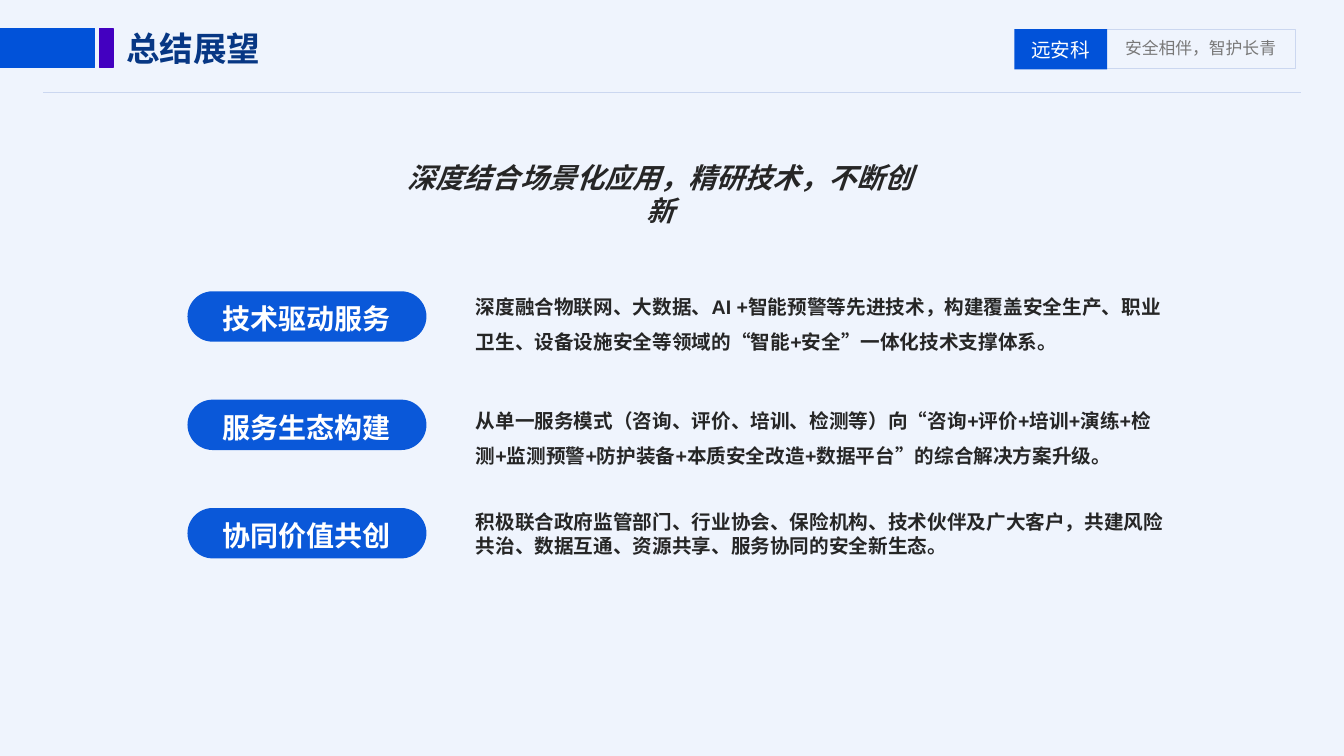
from lxml import etree
from pptx import Presentation
from pptx.dml.color import RGBColor
from pptx.enum.shapes import MSO_CONNECTOR, MSO_SHAPE
from pptx.enum.text import MSO_ANCHOR, MSO_AUTO_SIZE, PP_ALIGN
from pptx.oxml.ns import qn
from pptx.util import Inches, Pt

RECT, ROUNDED = MSO_SHAPE.RECTANGLE, MSO_SHAPE.ROUNDED_RECTANGLE
STRAIGHT = MSO_CONNECTOR.STRAIGHT
LEFT, CENTER = PP_ALIGN.LEFT, PP_ALIGN.CENTER
TOP, MIDDLE = MSO_ANCHOR.TOP, MSO_ANCHOR.MIDDLE
GROW = MSO_AUTO_SIZE.SHAPE_TO_FIT_TEXT

LATIN, CJK = "Arial", "Noto Sans CJK SC"
BLUE, PURPLE, PALE = "0152D9", "4300C0", "CBD7F0"
PILL_BLUE, DARK, WHITE = "0A58D9", "262626", "FFFFFF"
PILL_TOP, PILL_PITCH = 2.89, 1.075

# Pill label, description, description top, height and line spacing
TOPICS = [
    ("技术驱动服务",
     "深度融合物联网、大数据、AI +智能预警等先进技术，构建覆盖安全生产、"
     "职业卫生、设备设施安全等领域的“智能+安全”一体化技术支撑体系。",
     2.76, 0.81, 1.5),
    ("服务生态构建",
     "从单一服务模式（咨询、评价、培训、检测等）向“咨询+评价+培训+演练"
     "+检测+监测预警+防护装备+本质安全改造+数据平台”的综合解决方案升级。",
     3.89, 0.81, 1.5),
    ("协同价值共创",
     "积极联合政府监管部门、行业协会、保险机构、技术伙伴及广大客户，"
     "共建风险共治、数据互通、资源共享、服务协同的安全新生态。",
     5.01, 0.57, 1),
]


def rgb(color):
    return RGBColor.from_string(color)


def write(tf, text, size, color, font=LATIN, bold=False, italic=False,
          align=LEFT, spacing=None):
    p = tf.paragraphs[0]
    p.alignment = align
    p.line_spacing = spacing
    r = p.add_run()
    r.text = text
    r.font.size = Pt(size)
    r.font.name = font
    r.font.bold = bold
    r.font.italic = italic
    r.font.color.rgb = rgb(color)
    ea = etree.SubElement(r.font._element, qn("a:ea"))
    ea.set("typeface", CJK)


def add_text(slide, box, text, size, color, wrap=True, anchor=TOP,
             grow=True, **style):
    tf = slide.shapes.add_textbox(*map(Inches, box)).text_frame
    tf.word_wrap = wrap
    tf.vertical_anchor = anchor
    if grow:
        tf.auto_size = GROW
    write(tf, text, size, color, **style)
    return tf


def add_block(slide, box, fill=None, line=None, kind=RECT):
    s = slide.shapes.add_shape(kind, *map(Inches, box))
    s.shadow.inherit = False
    if fill:
        s.fill.solid()
        s.fill.fore_color.rgb = rgb(fill)
    else:
        s.fill.background()
    if line:
        s.line.color.rgb = rgb(line)
        s.line.width = Pt(1)
    else:
        s.line.fill.background()
    return s


def add_rule(slide, left, right, y):
    c = slide.shapes.add_connector(
        STRAIGHT, Inches(left), Inches(y), Inches(right), Inches(y))
    c.line.color.rgb = rgb(PALE)
    c.line.width = Pt(0.5)
    etree.SubElement(c._element.spPr, qn("a:effectLst"))


def add_header(slide):
    add_rule(slide, 0.43, 12.9, 0.92)
    add_block(slide, (0, 0.28, 0.94, 0.39), BLUE, BLUE)
    add_block(slide, (0.99, 0.28, 0.13, 0.39), PURPLE, PURPLE)
    add_text(slide, (11.06, 0.33, 1.7, 0.3), "安全相伴，智护长青", 12, "787878",
             wrap=False, font=CJK)
    add_block(slide, (10.43, 0.29, 2.42, 0.39), line=PALE)
    badge = add_block(slide, (10.06, 0.29, 0.92, 0.4), BLUE)
    badge.text_frame.vertical_anchor = MIDDLE
    write(badge.text_frame, "远安科", 14, WHITE, font=CJK, align=CENTER)
    tf = add_text(slide, (1.25, 0.3, 5.25, 0.5), "总结展望", 24, "073784",
                  grow=False, bold=True, spacing=0.97)
    tf.margin_left = tf.margin_top = tf.margin_right = tf.margin_bottom = 0


def add_pill(slide, top, label):
    pill = add_block(slide, (1.86, top, 2.37, 0.5), PILL_BLUE, kind=ROUNDED)
    pill.adjustments[0] = 0.5
    add_text(slide, (1.9, top - 0.01, 2.28, 0.48), label, 20, WHITE,
             anchor=MIDDLE, bold=True, align=CENTER, spacing=1.25)


def main():
    prs = Presentation()
    prs.slide_width, prs.slide_height = Inches(13.33), Inches(7.5)
    slide = prs.slides.add_slide(prs.slide_layouts[6])
    slide.background.fill.solid()
    slide.background.fill.fore_color.rgb = rgb("EFF4FD")

    add_header(slide)
    add_text(slide, (3.93, 1.54, 5.24, 0.44),
             "深度结合场景化应用，精研技术，不断创新", 20, DARK,
             bold=True, italic=True, align=CENTER)
    for i, (label, text, top, height, spacing) in enumerate(TOPICS):
        add_pill(slide, PILL_TOP + i * PILL_PITCH, label)
        add_text(slide, (4.62, top, 7.08, height), text, 14, DARK,
                 bold=True, spacing=spacing)
    prs.save("out.pptx")


if __name__ == "__main__":
    main()
